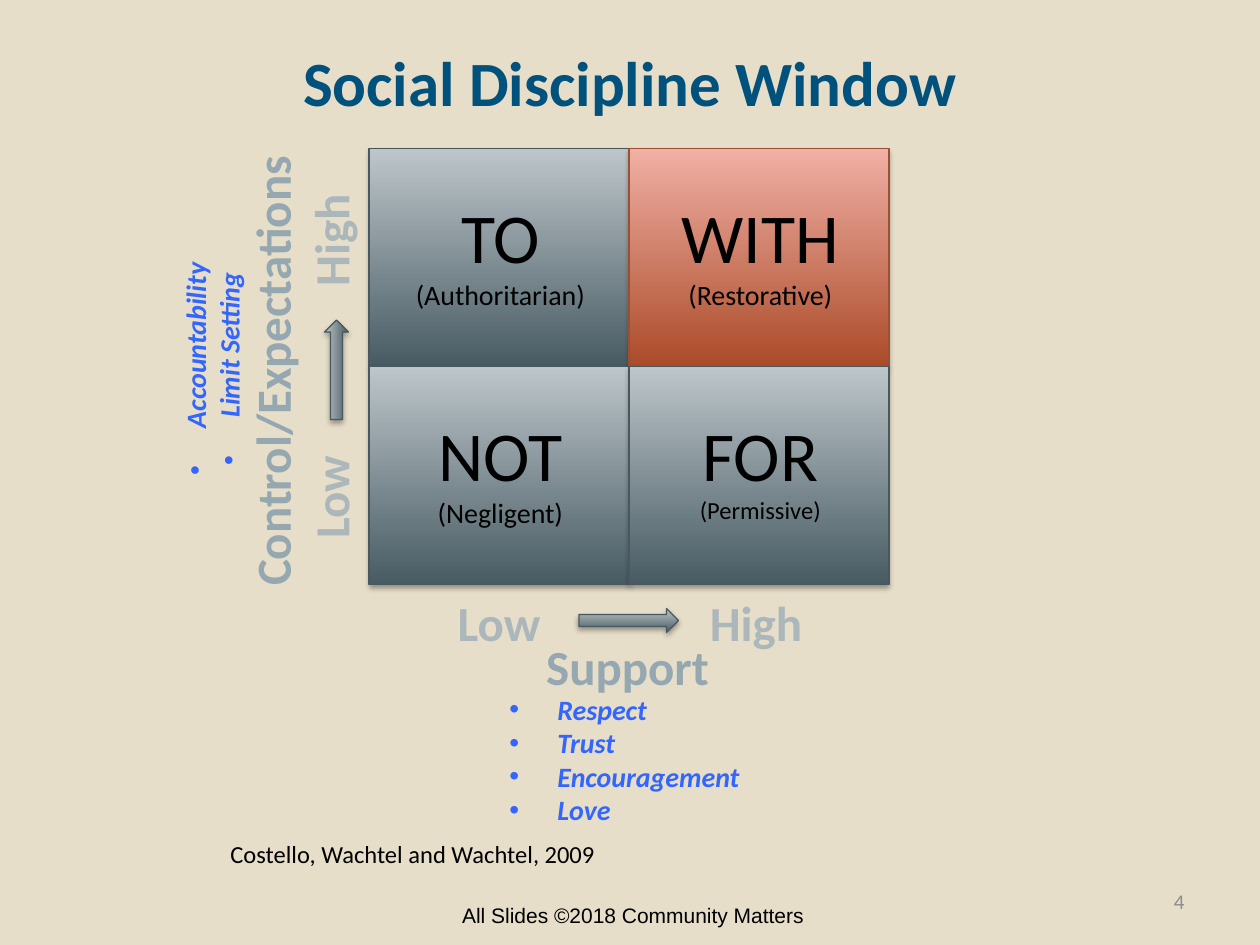
from dataclasses import dataclass

from lxml import etree
from pptx import Presentation
from pptx import util as u
from pptx.dml.color import RGBColor
from pptx.enum import shapes, text
from pptx.oxml import ns

# The slide is a grid of 100 columns by 75 rows.
COLUMNS, ROWS = 100, 75
UNIT = u.Inches(0.1)
COLORS = {
    "sand": "E6DEC9", "title": "00517B", "ink": "000000", "number": "8C8C8C",
    "axis": "95A8B1", "scale": "ACB7BC", "bullet": "3366FF",
    "slate_dark": "485B63", "slate_light": "BDC6CA", "slate_line": "49585E",
    "rust_dark": "AB4B29", "rust_light": "F0B0A4", "rust_line": "9B4F34",
}
LEFT, CENTER, RIGHT = text.PP_ALIGN.LEFT, text.PP_ALIGN.CENTER, text.PP_ALIGN.RIGHT
MIDDLE, TOP = text.MSO_ANCHOR.MIDDLE, text.MSO_ANCHOR.TOP


@dataclass
class Area:
    col: float
    row: float
    cols: float
    rows: float

    def emu(self) -> list[int]:
        return [round(n * UNIT) for n in (self.col, self.row, self.cols, self.rows)]


@dataclass
class Style:
    size: float
    color: str
    bold: bool = False
    italic: bool = False
    font: str = "Calibri"
    align: text.PP_ALIGN = CENTER
    anchor: text.MSO_ANCHOR = TOP
    wrap: bool = True
    bullets: bool = False


@dataclass
class Quadrant:
    column: int
    row: int
    approach: str
    manner: str
    manner_size: int = 16
    palette: str = "slate"


@dataclass
class Label:
    area: Area
    lines: list[str]
    style: Style
    rotation: float = 0


WINDOW = Area(29.3, 11.8, 20.63, 17.3)  # first pane; the others follow its size
QUADRANTS = [
    Quadrant(0, 0, "TO", "(Authoritarian)"),
    Quadrant(1, 0, "WITH", "(Restorative)", palette="rust"),
    Quadrant(0, 1, "NOT", "(Negligent)"),
    Quadrant(1, 1, "FOR", "(Permissive)", manner_size=14),
]
AXIS = Style(28, "axis", bold=True, wrap=False)
SCALE = Style(28, "scale", bold=True, wrap=False)
TRAITS = Style(16, "bullet", bold=True, italic=True, wrap=False, bullets=True)
LEFT_TRAITS = Style(16, "bullet", bold=True, italic=True, align=LEFT, bullets=True)
LABELS = [
    Label(Area(3.2, 26.6, 36.7, 5.7), ["Control/Expectations"], AXIS, 270),
    Label(Area(42.25, 50, 15.1, 5.7), ["Support"], AXIS),
    Label(Area(34.6, 46.5, 10, 5.7), ["Low"], SCALE),
    Label(Area(55, 46.5, 10, 5.7), ["High"], SCALE),
    Label(Area(21.2, 36.6, 10, 5.7), ["Low"], SCALE, 270),
    Label(Area(21.2, 16.2, 10, 5.7), ["High"], SCALE, 270),
    Label(Area(7.2, 26.1, 19.3, 6.4), ["Accountability", "Limit Setting"], TRAITS, 270),
    Label(Area(39.45, 54.45, 20.5, 11.8),
          ["Respect", "Trust", "Encouragement", "Love"], LEFT_TRAITS),
    Label(Area(17.3, 66.1, 66, 3.4), ["Costello, Wachtel and Wachtel, 2009"],
          Style(14, "ink", align=LEFT)),
    Label(Area(31.3, 70.6, 37.9, 4), ["All Slides ©2018 Community Matters"],
          Style(12, "ink", font="Arial", anchor=MIDDLE)),
    Label(Area(71.7, 69.5, 23.3, 4), ["4"],
          Style(12, "number", align=RIGHT, anchor=MIDDLE)),
]
ARROWS = [(Area(45.95, 48.3, 7.9, 1.9), 0), (Area(22.75, 28.4, 7.9, 1.9), 270)]


def rgb(name: str) -> RGBColor:
    return RGBColor.from_string(COLORS[name])


def add_bullet(paragraph) -> None:
    properties = paragraph._p.get_or_add_pPr()
    indent = u.Inches(0.38)
    properties.set("marL", str(indent))
    properties.set("indent", str(-indent))
    etree.SubElement(properties, ns.qn("a:buFont"), typeface="Arial")
    etree.SubElement(properties, ns.qn("a:buChar"), char="•")


def format_paragraph(paragraph, style: Style) -> None:
    paragraph.alignment = style.align
    if style.bullets:
        add_bullet(paragraph)
    font = paragraph.font
    font.name, font.size = style.font, u.Pt(style.size)
    font.bold, font.italic = style.bold, style.italic
    font.color.rgb = rgb(style.color)


def add_label(slide, label: Label):
    box = slide.shapes.add_textbox(*label.area.emu())
    box.rotation = label.rotation
    frame = box.text_frame
    frame.word_wrap = label.style.wrap
    frame.vertical_anchor = label.style.anchor
    frame.text = "\n".join(label.lines)
    for paragraph in frame.paragraphs:
        format_paragraph(paragraph, label.style)
    return box


def add_shadow(shape) -> None:
    shape.shadow.inherit = False
    effects = shape._element.spPr.find(ns.qn("a:effectLst"))
    shadow = etree.SubElement(
        effects, ns.qn("a:outerShdw"), blurRad=str(u.Pt(3.1)),
        dist=str(u.Pt(1.8)), dir="5400000", rotWithShape="0")
    color = etree.SubElement(shadow, ns.qn("a:srgbClr"), val=COLORS["ink"])
    etree.SubElement(color, ns.qn("a:alpha"), val="35000")


def add_shaded_shape(slide, kind, area: Area, palette: str, rotation: float = 0) -> None:
    """Draw a shape that fades from dark at its bottom to light at its top."""
    shape = slide.shapes.add_shape(kind, *area.emu())
    shape.rotation = rotation
    shape.fill.gradient()
    shape.fill.gradient_angle = 90
    for stop, position, tone in zip(shape.fill.gradient_stops, (0, 1), ("dark", "light")):
        stop.position = position
        stop.color.rgb = rgb(f"{palette}_{tone}")
    shape.line.color.rgb = rgb(f"{palette}_line")
    shape.line.width = u.Pt(0.75)
    add_shadow(shape)


def pane(quadrant: Quadrant) -> Area:
    return Area(WINDOW.col + quadrant.column * WINDOW.cols,
                WINDOW.row + quadrant.row * WINDOW.rows, WINDOW.cols, WINDOW.rows)


def add_caption(slide, quadrant: Quadrant) -> None:
    area = pane(quadrant)
    inside = Area(area.col + 2.4, area.row + 3.05, area.cols - 4.6, 10.4)
    caption = add_label(slide, Label(inside, [quadrant.approach, quadrant.manner],
                                     Style(40, "ink")))
    caption.text_frame.paragraphs[1].font.size = u.Pt(quadrant.manner_size)


def add_title(slide, wording: str) -> None:
    title = slide.shapes.title
    title.left, title.top, title.width, title.height = Area(5, 0.2, 90, 12.5).emu()
    title.text_frame.text = wording
    title.text_frame.vertical_anchor = MIDDLE
    format_paragraph(title.text_frame.paragraphs[0], Style(36, "title", bold=True))


def main() -> None:
    deck = Presentation()
    deck.slide_width, deck.slide_height = COLUMNS * UNIT, ROWS * UNIT
    slide = deck.slides.add_slide(deck.slide_layouts.get_by_name("Title Only"))
    slide.background.fill.solid()
    slide.background.fill.fore_color.rgb = rgb("sand")
    add_title(slide, "Social Discipline Window")
    for quadrant in QUADRANTS:
        add_shaded_shape(slide, shapes.MSO_SHAPE.RECTANGLE, pane(quadrant), quadrant.palette)
    for quadrant in QUADRANTS:
        add_caption(slide, quadrant)
    for area, rotation in ARROWS:
        add_shaded_shape(slide, shapes.MSO_SHAPE.RIGHT_ARROW, area, "slate", rotation)
    for label in LABELS:
        add_label(slide, label)
    deck.save("out.pptx")


if __name__ == "__main__":
    main()
